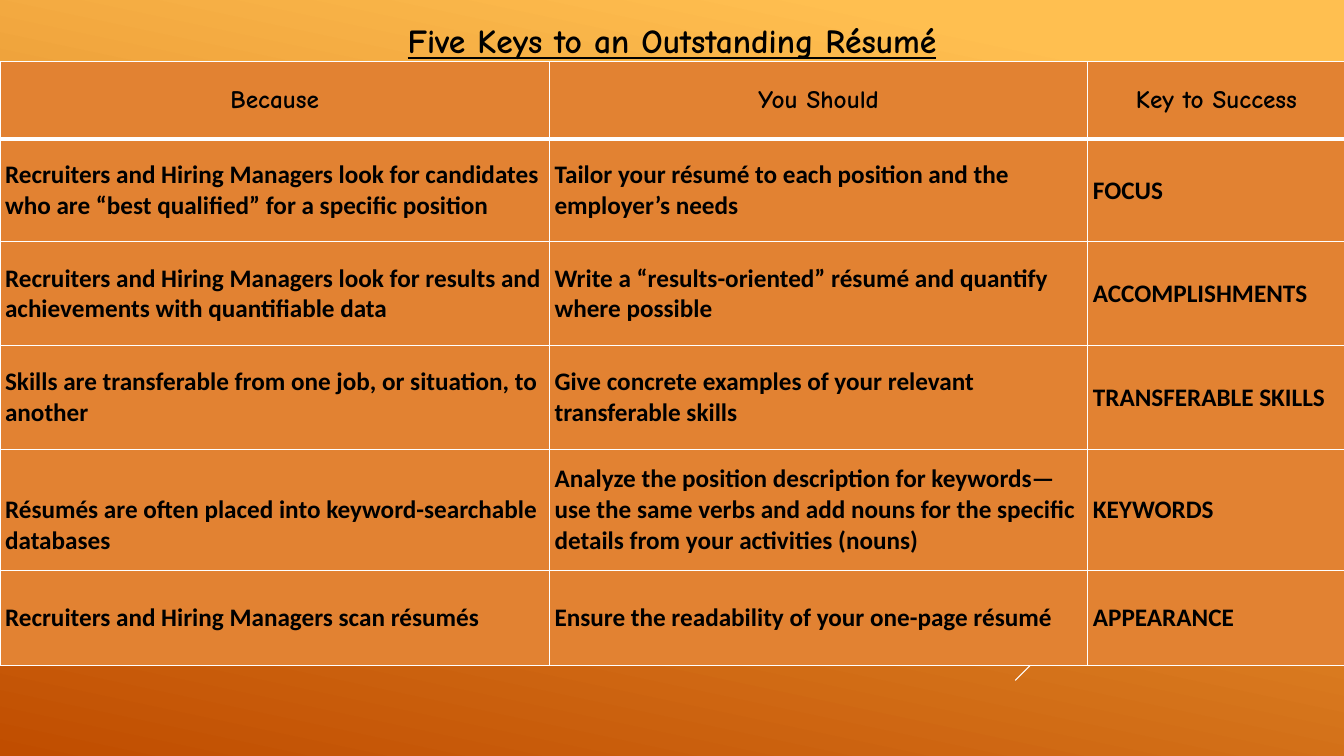
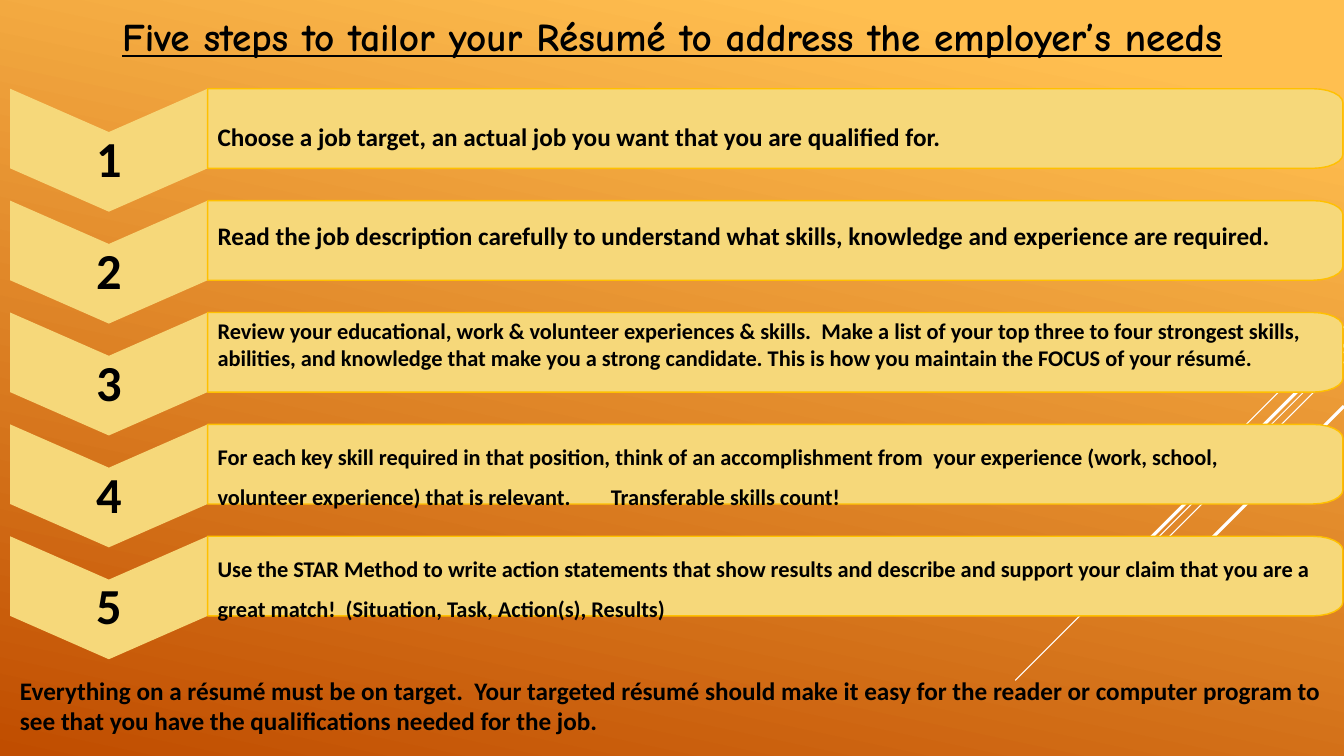
from math import cos, pi, sin

from lxml import etree
from pptx import Presentation
from pptx.dml.color import RGBColor
from pptx.enum.shapes import MSO_CONNECTOR as Connector
from pptx.enum.text import MSO_ANCHOR as Anchor, PP_ALIGN as Align
from pptx.oxml.ns import qn
from pptx.util import Inches, Pt

# Shared style
HEADING_FONT, BODY_FONT = "Comic Neue", "Calibri"
BLACK, WHITE = "000000", "FFFFFF"
CELL_FILL, STEP_FILL, STEP_LINE = "E28232", "F6D87A", "FFC000"
GRADIENT = [(0.1, "FFBF50"), (1, "C04D00")]
# Diagonal lines: height at the right edge, run to the left, width
DIAGONALS = [(3.24, 1, 0.75), (3.49, 3.26, 0.75), (3.59, 2.07, 0.75),
             (3.42, 1.91, 2.25), (4.03, 1.39, 2.25)]
SLIDE_WIDTH, SLIDE_HEIGHT = 13.33, 7.5

# Step geometry
STEP_TOP, STEP_PITCH, BAR_HEIGHT, NOTCH = 0.88, 1.11, 0.79, 0.43
CHEVRON_LEFT, BAR_LEFT, BAR_RIGHT = 0.1, 2.06, 13.32
CORNER_WIDTH, CORNER_HEIGHT = 0.3, 0.14

# Content
COLUMN_WIDTHS = [5.45, 5.34, 2.55]
ROW_HEIGHTS = [0.77, 1.02, 1.03, 1.03, 1.2, 0.94]
KEYS = [
    ("Because", "You Should", "Key to Success"),
    ("Recruiters and Hiring Managers look for candidates who are “best qualified” for a specific position",
     "Tailor your résumé to each position and the employer’s needs", "FOCUS"),
    ("Recruiters and Hiring Managers look for results and achievements with quantifiable data",
     "Write a “results-oriented” résumé and quantify where possible", "ACCOMPLISHMENTS"),
    ("Skills are transferable from one job, or situation, to another",
     "Give concrete examples of your relevant transferable skills", "TRANSFERABLE SKILLS"),
    ("Résumés are often placed into keyword-searchable databases",
     "Analyze the position description for keywords— use the same verbs and add nouns "
     "for the specific details from your activities (nouns)", "KEYWORDS"),
    ("Recruiters and Hiring Managers scan résumés",
     "Ensure the readability of your one-page résumé", "APPEARANCE"),
]
# Step text, size, line spacing, anchor, tab stops
STEPS = [
    ("Choose a job target, an actual job you want that you are qualified for.",
     18, 1.5, Anchor.MIDDLE, []),
    ("Read the job description carefully to understand what skills, knowledge and "
     "experience are required.", 18, 1.5, Anchor.TOP, []),
    ("Review your educational, work & volunteer experiences & skills.  Make a list of your top "
     "three to four strongest skills, abilities, and knowledge that make you a strong candidate. "
     "This is how you maintain the FOCUS of your résumé.", 16, 1, Anchor.TOP, []),
    ("For each key skill required in that position, think of an accomplishment from\tyour "
     "experience (work, school,\vvolunteer experience) that is relevant.\tTransferable skills count!",
     16, 1.5, Anchor.TOP, [3.9, 7.1]),
    ("Use the STAR Method to write action statements that show results and describe and support "
     "your claim that you are a great match!  (Situation, Task, Action(s), Results)",
     16, 1.5, Anchor.TOP, []),
]


def color(hex_value):
    return RGBColor.from_string(hex_value)


def set_formats(target, formats):
    for name, value in formats.items():
        setattr(target, name, value)


class Deck:
    def __init__(self):
        self.presentation = Presentation()
        set_formats(self.presentation, {"slide_width": Inches(SLIDE_WIDTH),
                                        "slide_height": Inches(SLIDE_HEIGHT)})
        self.slide = None

    def add_slide(self):
        self.slide = self.presentation.slides.add_slide(self.presentation.slide_layouts[6])
        fill = self.slide.background.fill
        fill.gradient()
        fill.gradient_angle = 258
        for stop, (position, hex_value) in zip(fill.gradient_stops, GRADIENT):
            stop.position = position
            stop.color.rgb = color(hex_value)
        for top, run, width in DIAGONALS:
            self.line(SLIDE_WIDTH, top, SLIDE_WIDTH - run, top + run, width)

    def line(self, x1, y1, x2, y2, width):
        connector = self.slide.shapes.add_connector(
            Connector.STRAIGHT, Inches(x1), Inches(y1), Inches(x2), Inches(y2))
        connector.line.color.rgb = color(WHITE)
        connector.line.width = Pt(width)
        etree.SubElement(connector.element.spPr, qn("a:effectLst"))

    def put_text(self, frame, text, size, font=BODY_FONT, underline=None, tabs=(),
                 **paragraph_formats):
        paragraph = frame.paragraphs[0]
        paragraph.text = text
        set_formats(paragraph, paragraph_formats)
        for run in paragraph.runs:
            set_formats(run.font, {"name": font, "size": Pt(size), "bold": True,
                                   "underline": underline})
            run.font.color.rgb = color(BLACK)
        if tabs:
            tab_list = etree.SubElement(paragraph._p.get_or_add_pPr(), qn("a:tabLst"))
            for position in tabs:
                etree.SubElement(tab_list, qn("a:tab"), pos=str(Inches(position)), algn="l")

    def text_box(self, left, top, width, height, text, size, **formats):
        box = self.slide.shapes.add_textbox(*map(Inches, (left, top, width, height)))
        box.text_frame.word_wrap = True
        self.put_text(box.text_frame, text, size, **formats)

    def title(self, top, height, text, size, line_spacing=1.0):
        self.text_box(0, top, SLIDE_WIDTH, height, text, size, font=HEADING_FONT,
                      underline=True, alignment=Align.CENTER, line_spacing=line_spacing)

    def outline(self, points, line_color=None):
        (x, y), *others = [(Inches(px), Inches(py)) for px, py in points]
        builder = self.slide.shapes.build_freeform(x, y)
        builder.add_line_segments(others, close=True)
        shape = builder.convert_to_shape()
        shape.shadow.inherit = False
        shape.fill.solid()
        shape.fill.fore_color.rgb = color(STEP_FILL)
        if line_color:
            shape.line.color.rgb = color(line_color)
            shape.line.width = Pt(1)
        else:
            shape.line.fill.background()
        shape.text_frame.word_wrap = True
        return shape

    def chevron(self, top, number):
        middle = (CHEVRON_LEFT + BAR_LEFT) / 2
        bottom = top + BAR_HEIGHT
        shape = self.outline([(BAR_LEFT, top), (middle, top + NOTCH), (CHEVRON_LEFT, top),
                              (CHEVRON_LEFT, bottom), (middle, bottom + NOTCH), (BAR_LEFT, bottom)])
        set_formats(shape.text_frame, {"vertical_anchor": Anchor.MIDDLE,
                                       "margin_top": Inches(0.14), "margin_bottom": 0})
        self.put_text(shape.text_frame, str(number), 36, alignment=Align.CENTER)

    def bar(self, top, text, size, spacing, anchor, tabs):
        bottom = top + BAR_HEIGHT
        angles = [pi / 2 * step / 6 for step in range(7)]
        arc = [(BAR_RIGHT - CORNER_WIDTH * (1 - sin(angle)), CORNER_HEIGHT * (1 - cos(angle)))
               for angle in angles]
        upper = [(x, top + drop) for x, drop in arc]
        lower = [(x, bottom - drop) for x, drop in reversed(arc)]
        shape = self.outline([(BAR_LEFT, top), *upper, *lower, (BAR_LEFT, bottom)], STEP_LINE)
        shape.text_frame.vertical_anchor = anchor
        self.put_text(shape.text_frame, text, size, tabs=tabs, alignment=Align.LEFT,
                      line_spacing=float(spacing))

    def borders(self, cell, widths):
        properties = cell._tc.get_or_add_tcPr()
        for side, width in zip("LRTB", widths):
            border = etree.SubElement(properties, qn(f"a:ln{side}"), w=str(Pt(width)))
            fill = etree.SubElement(border, qn("a:solidFill"))
            etree.SubElement(fill, qn("a:srgbClr"), val=WHITE)

    def table(self, top, rows):
        table = self.slide.shapes.add_table(
            len(rows), len(COLUMN_WIDTHS), 0, Inches(top),
            Inches(sum(COLUMN_WIDTHS)), Inches(sum(ROW_HEIGHTS))).table
        for column, width in zip(table.columns, COLUMN_WIDTHS):
            column.width = Inches(width)
        for row, height in zip(table.rows, ROW_HEIGHTS):
            row.height = Inches(height)
        for row_index, texts in enumerate(rows):
            header = row_index == 0
            for column_index, text in enumerate(texts):
                cell = table.cell(row_index, column_index)
                set_formats(cell, {"vertical_anchor": Anchor.MIDDLE, "margin_top": 0,
                                   "margin_bottom": 0, "margin_left": Inches(0.05),
                                   "margin_right": Inches(0.05)})
                self.borders(cell, (1, 1, 3 if row_index == 1 else 1, 3 if header else 1))
                cell.fill.solid()
                cell.fill.fore_color.rgb = color(CELL_FILL)
                self.put_text(cell.text_frame, text, 18,
                              font=HEADING_FONT if header else BODY_FONT,
                              alignment=Align.CENTER if header else Align.LEFT)
        return table


def main():
    deck = Deck()

    # Five keys
    deck.add_slide()
    deck.title(0.12, 0.51, "Five Keys to an Outstanding Résumé", 24, 1.07)
    table = deck.table(0.61, KEYS)
    table.cell(4, 0).margin_top = Inches(0.3)

    # Five steps
    deck.add_slide()
    deck.title(0.07, 0.57, "Five steps to tailor your Résumé to address the employer’s needs", 28)
    for index, step in enumerate(STEPS):
        top = STEP_TOP + index * STEP_PITCH
        deck.chevron(top, index + 1)
        deck.bar(top, *step)
    deck.text_box(0.1, 6.65, 13.23, 0.7,
                  "Everything on a résumé must be on target.  Your targeted résumé should make it easy "
                  "for the reader or computer program to see that you have the qualifications needed "
                  "for the job.", 18)

    deck.presentation.save("out.pptx")


if __name__ == "__main__":
    main()
